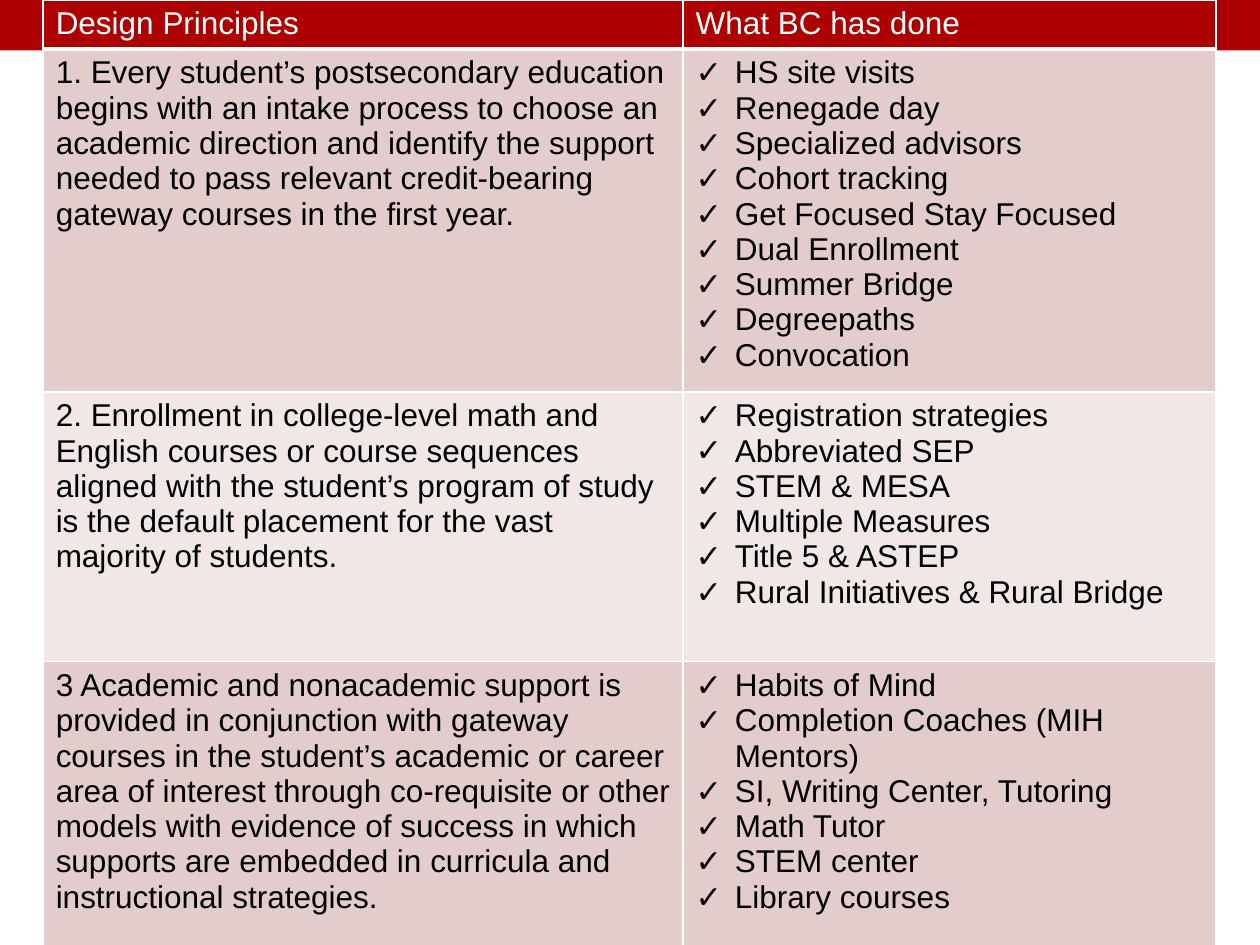
from dataclasses import dataclass

from lxml.etree import SubElement as Sub
from pptx import Presentation as Deck
from pptx.dml.color import RGBColor as Rgb
from pptx.enum.shapes import MSO_SHAPE as Form
from pptx.oxml import parse_xml
from pptx.oxml.ns import nsdecls, qn
from pptx.util import Cm, Pt


@dataclass(frozen=True)
class Theme:
    """Colours, font and type size."""
    red: str = "AD0101"
    rose: str = "E3CCCC"
    pale: str = "F1E7E7"
    white: str = "FFFFFF"
    black: str = "000000"
    font: str = "Arial"
    size: int = 18
    thin: int = 1
    thick: int = 3


LOOK = Theme()
WIDTHS = (12.9, 10.74)
HEIGHTS = (0.99, 6.91, 5.44, 6.17)
HEADS = ("Design Principles", "What BC has done")
ROWS = (
    ("1. Every student’s postsecondary education begins with an intake process "
     "to choose an academic direction and identify the support needed to pass "
     "relevant credit-bearing gateway courses in the first year.",
     ("HS site visits", "Renegade day", "Specialized advisors",
      "Cohort tracking", "Get Focused Stay Focused", "Dual Enrollment",
      "Summer Bridge", "Degreepaths", "Convocation")),
    ("2. Enrollment in college-level math and English courses or course "
     "sequences aligned with the student’s program of study is the default "
     "placement for the vast majority of students.",
     ("Registration strategies", "Abbreviated SEP", "STEM & MESA",
      "Multiple Measures", "Title 5 & ASTEP",
      "Rural Initiatives & Rural Bridge")),
    ("3 Academic and nonacademic support is provided in conjunction with "
     "gateway courses in the student’s academic or career area of interest "
     "through co-requisite or other models with evidence of success in which "
     "supports are embedded in curricula and instructional strategies.",
     ("Habits of Mind", "Completion Coaches (MIH Mentors)",
      "SI, Writing Center, Tutoring", "Math Tutor", "STEM center",
      "Library courses")),
)


def add_band(slide, width):
    """Draw the red band across the top."""
    band = slide.shapes.add_shape(Form.RECTANGLE, 0, 0, width, Cm(1.02))
    band.shadow.inherit = False
    band.fill.solid()
    band.fill.fore_color.rgb = Rgb.from_string(LOOK.red)
    band.line.fill.background()


def add_ticks(frame):
    """Give each paragraph a hanging tick."""
    for para in frame.paragraphs:
        props = para._p.get_or_add_pPr()
        props.set("marL", str(Cm(0.79)))
        props.set("indent", str(-Cm(0.79)))
        Sub(props, qn("a:buFont"), typeface=LOOK.font)
        Sub(props, qn("a:buChar"), char="✓")


def edge_cell(cell, top, base):
    """Set the four white borders of a cell."""
    props = cell._tc.get_or_add_tcPr()
    sides = {"lnL": LOOK.thin, "lnR": LOOK.thin, "lnT": top, "lnB": base}
    for spot, (tag, size) in enumerate(sides.items()):
        props.insert(spot, parse_xml(
            f'<a:{tag} {nsdecls("a")} w="{Pt(size)}"><a:solidFill>'
            f'<a:srgbClr val="{LOOK.white}"/></a:solidFill></a:{tag}>'))


def fill_cell(cell, text, back, ink):
    """Write and colour one cell."""
    cell.text_frame.text = text
    cell.fill.solid()
    cell.fill.fore_color.rgb = Rgb.from_string(back)
    for para in cell.text_frame.paragraphs:
        for run in para.runs:
            run.font.name = LOOK.font
            run.font.size = Pt(LOOK.size)
            run.font.bold = False
            run.font.color.rgb = Rgb.from_string(ink)


def add_grid(slide):
    """Build the table of principles and actions."""
    grid = slide.shapes.add_table(
        len(HEIGHTS), len(WIDTHS), Cm(0.87), 0,
        Cm(sum(WIDTHS)), Cm(sum(HEIGHTS))).table
    for col, width in zip(grid.columns, WIDTHS):
        col.width = Cm(width)
    for row, height in zip(grid.rows, HEIGHTS):
        row.height = Cm(height)
    for col, head in enumerate(HEADS):
        fill_cell(grid.cell(0, col), head, LOOK.red, LOOK.white)
        edge_cell(grid.cell(0, col), LOOK.thin, LOOK.thick)
    for row, (rule, deeds) in enumerate(ROWS, 1):
        back = LOOK.rose if row % 2 else LOOK.pale
        top = LOOK.thick if row == 1 else LOOK.thin
        for col, text in enumerate((rule, "\n".join(deeds))):
            fill_cell(grid.cell(row, col), text, back, LOOK.black)
            edge_cell(grid.cell(row, col), top, LOOK.thin)
        add_ticks(grid.cell(row, 1).text_frame)


def main():
    """Make the deck and save it."""
    deck = Deck()
    deck.slide_width, deck.slide_height = Cm(25.4), Cm(19.05)
    slide = deck.slides.add_slide(deck.slide_layouts[6])
    add_band(slide, deck.slide_width)
    add_grid(slide)
    deck.save("out.pptx")


if __name__ == "__main__":
    main()
